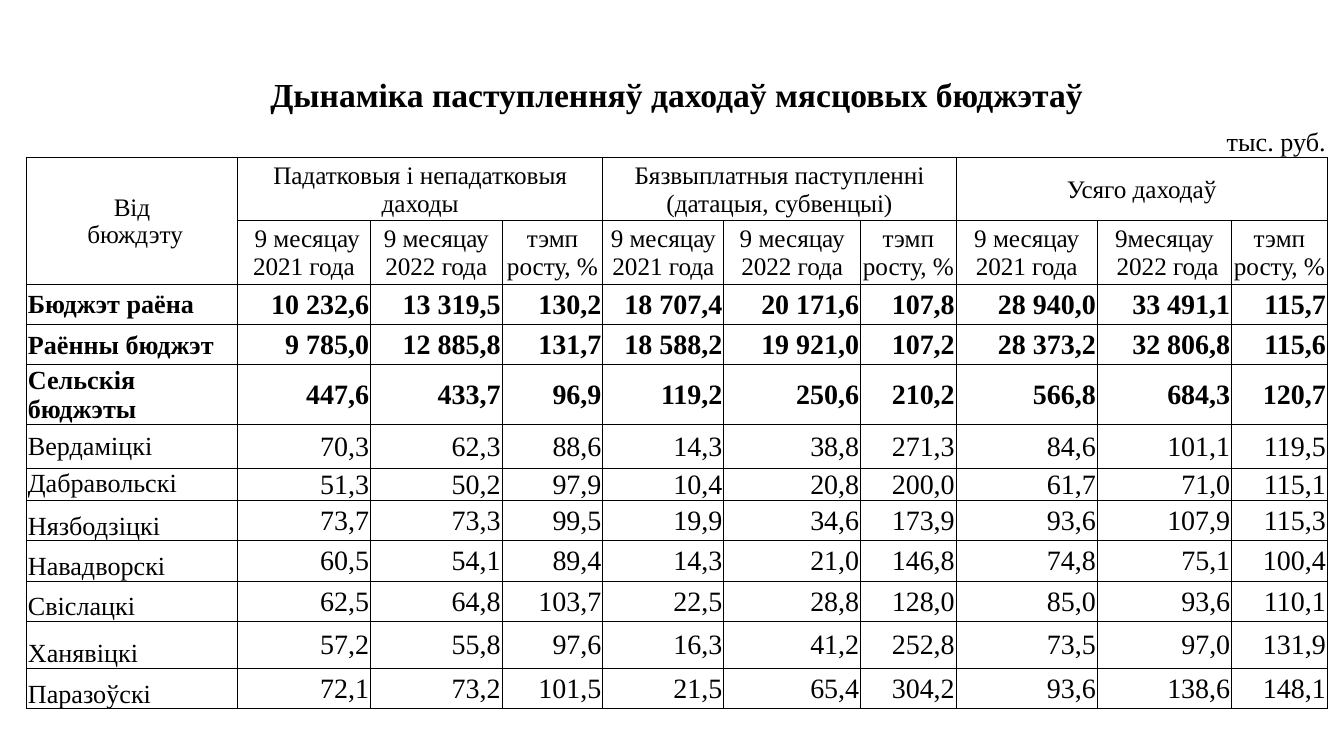
from lxml.etree import SubElement
from pptx import Presentation
from pptx.dml.color import RGBColor
from pptx.enum.text import MSO_VERTICAL_ANCHOR as Anchor, PP_PARAGRAPH_ALIGNMENT as Align
from pptx.oxml.ns import qn
from pptx.util import Pt

BLACK = RGBColor(0, 0, 0)
WIDTHS = [113, 71.3, 60.5, 10, 54, 64.8, 15, 58.3, 51.2, 75.6, 61.2, 10.8, 51.2]
HEIGHTS = [23, 23, 34, 34, 21.6, 21.6, 21.6, 23.6, 17.2, 21.6, 21.6, 21.6, 25.2, 21.6]
# First and last grid column of each visible column
COLUMNS = [(0, 0), (1, 1), (2, 3), (4, 4), (5, 5), (6, 7), (8, 8), (9, 9), (10, 11), (12, 12)]
UNIT_ROW_SPANS = [(1, 2), (3, 6), (7, 8), (11, 12)]
GROUPS = [
    (1, 4, "Падатковыя і непадатковыя даходы"),
    (5, 8, "Бязвыплатныя паступленні (датацыя, субвенцыі)"),
    (9, 12, "Усяго даходаў"),
]
GROWTH = "тэмп\nросту, %"
SUBHEADS = [
    " 9 месяцау 2021 года", "9 месяцау 2022 года", GROWTH,
    "9 месяцау\n2021 года", "9 месяцау 2022 года", GROWTH,
    "9 месяцау 2021 года", "9месяцау\n 2022 года", GROWTH,
]
BUDGETS = [
    ("Бюджэт раёна", "10 232,6|13 319,5|130,2|18 707,4|20 171,6|107,8|28 940,0|33 491,1|115,7"),
    ("Раённы бюджэт", "9 785,0|12 885,8|131,7|18 588,2|19 921,0|107,2|28 373,2|32 806,8|115,6"),
    ("Сельскія бюджэты", "447,6|433,7|96,9|119,2|250,6|210,2|566,8|684,3|120,7"),
    ("Вердаміцкі", "70,3|62,3|88,6|14,3|38,8|271,3|84,6|101,1|119,5"),
    ("Дабравольскі", "51,3|50,2|97,9|10,4|20,8|200,0|61,7|71,0|115,1"),
    ("Нязбодзіцкі", "73,7|73,3|99,5|19,9|34,6|173,9|93,6|107,9|115,3"),
    ("Навадворскі", "60,5|54,1|89,4|14,3|21,0|146,8|74,8|75,1|100,4"),
    ("Свіслацкі", "62,5|64,8|103,7|22,5|28,8|128,0|85,0|93,6|110,1"),
    ("Ханявіцкі", "57,2|55,8|97,6|16,3|41,2|252,8|73,5|97,0|131,9"),
    ("Паразоўскі", "72,1|73,2|101,5|21,5|65,4|304,2|93,6|138,6|148,1"),
]
FIRST_BUDGET_ROW = 4
TOTAL_ROWS = 3
TOP_ALIGNED = 4
FIRST_BOTTOM_ALIGNED = 5


class BudgetSlide:
    FONT = "Times New Roman"
    MARGINS = {"margin_left": Pt(0.75), "margin_right": Pt(0.75),
               "margin_top": Pt(0.75), "margin_bottom": Pt(0)}

    def __init__(self, presentation):
        self.slide = presentation.slides.add_slide(presentation.slide_layouts[6])

    def add_table(self, left, top, widths, heights):
        frame = self.slide.shapes.add_table(
            len(heights), len(widths), Pt(left), Pt(top), Pt(sum(widths)), Pt(sum(heights)))
        self.table = frame.table
        self.table.first_row = self.table.horz_banding = False
        for column, width in zip(self.table.columns, widths):
            column.width = Pt(width)
        for index, height in enumerate(heights):
            self.table.rows[index].height = Pt(height)
            sides = "LRTB" if index > 1 else "B" * index
            for cell in self.table.rows[index].cells:
                self.set_borders(cell, sides)
                cell.fill.background()
                for name, value in self.MARGINS.items():
                    setattr(cell, name, value)

    def set_borders(self, cell, sides):
        """Draw thin black lines on the given sides and none on the others."""
        properties = cell._tc.get_or_add_tcPr()
        for side in "LRTB":
            line = SubElement(properties, qn(f"a:ln{side}"), w=str(Pt(0.5)))
            if side in sides:
                fill = SubElement(line, qn("a:solidFill"))
                SubElement(fill, qn("a:srgbClr"), val=str(BLACK))
            else:
                SubElement(line, qn("a:noFill"))

    def merge(self, row, first, last, last_row=None):
        end_row = row if last_row is None else last_row
        if (row, first) != (end_row, last):
            self.table.cell(row, first).merge(self.table.cell(end_row, last))

    def set_text(self, row, column, text, size, align=Align.CENTER, anchor=Anchor.MIDDLE,
                 bold=False):
        cell = self.table.cell(row, column)
        cell.text = text
        cell.vertical_anchor = anchor
        font_format = {"name": self.FONT, "size": Pt(size), "bold": bold}
        for paragraph in cell.text_frame.paragraphs:
            paragraph.alignment = align
            for run in paragraph.runs:
                run.font.color.rgb = BLACK
                for name, value in font_format.items():
                    setattr(run.font, name, value)

    def add_heading(self):
        self.merge(0, 0, 12)
        self.set_text(0, 0, "Дынаміка паступленняў даходаў мясцовых бюджэтаў", 18,
                      anchor=Anchor.BOTTOM, bold=True)
        for first, last in UNIT_ROW_SPANS:
            self.merge(1, first, last)
        self.set_text(1, 11, "тыс. руб.", 14, Align.RIGHT, Anchor.BOTTOM)

    def add_column_heads(self):
        self.merge(2, 0, 0, last_row=3)
        self.set_text(2, 0, "Вiд\n бюждэту", 13.5)
        for first, last, text in GROUPS:
            self.merge(2, first, last)
            self.set_text(2, first, text, 13.5)
        for (first, last), text in zip(COLUMNS[1:], SUBHEADS):
            self.merge(3, first, last)
            self.set_text(3, first, text, 13.5)

    def add_budget(self, index, name, values):
        row = FIRST_BUDGET_ROW + index
        bold = index < TOTAL_ROWS
        anchor = Anchor.TOP if index == TOP_ALIGNED else Anchor.MIDDLE
        name_anchor = Anchor.BOTTOM if index >= FIRST_BOTTOM_ALIGNED else anchor
        self.set_text(row, 0, name, 14, Align.LEFT, name_anchor, bold)
        for (first, last), value in zip(COLUMNS[1:], values.split("|")):
            self.merge(row, first, last)
            self.set_text(row, first, value, 15, Align.RIGHT, anchor, bold)


def main():
    presentation = Presentation()
    presentation.slide_width, presentation.slide_height = Pt(720), Pt(405)
    slide = BudgetSlide(presentation)
    slide.add_table(14.2, 38.3, WIDTHS, HEIGHTS)
    slide.add_heading()
    slide.add_column_heads()
    for index, (name, values) in enumerate(BUDGETS):
        slide.add_budget(index, name, values)
    presentation.save("out.pptx")


if __name__ == "__main__":
    main()
